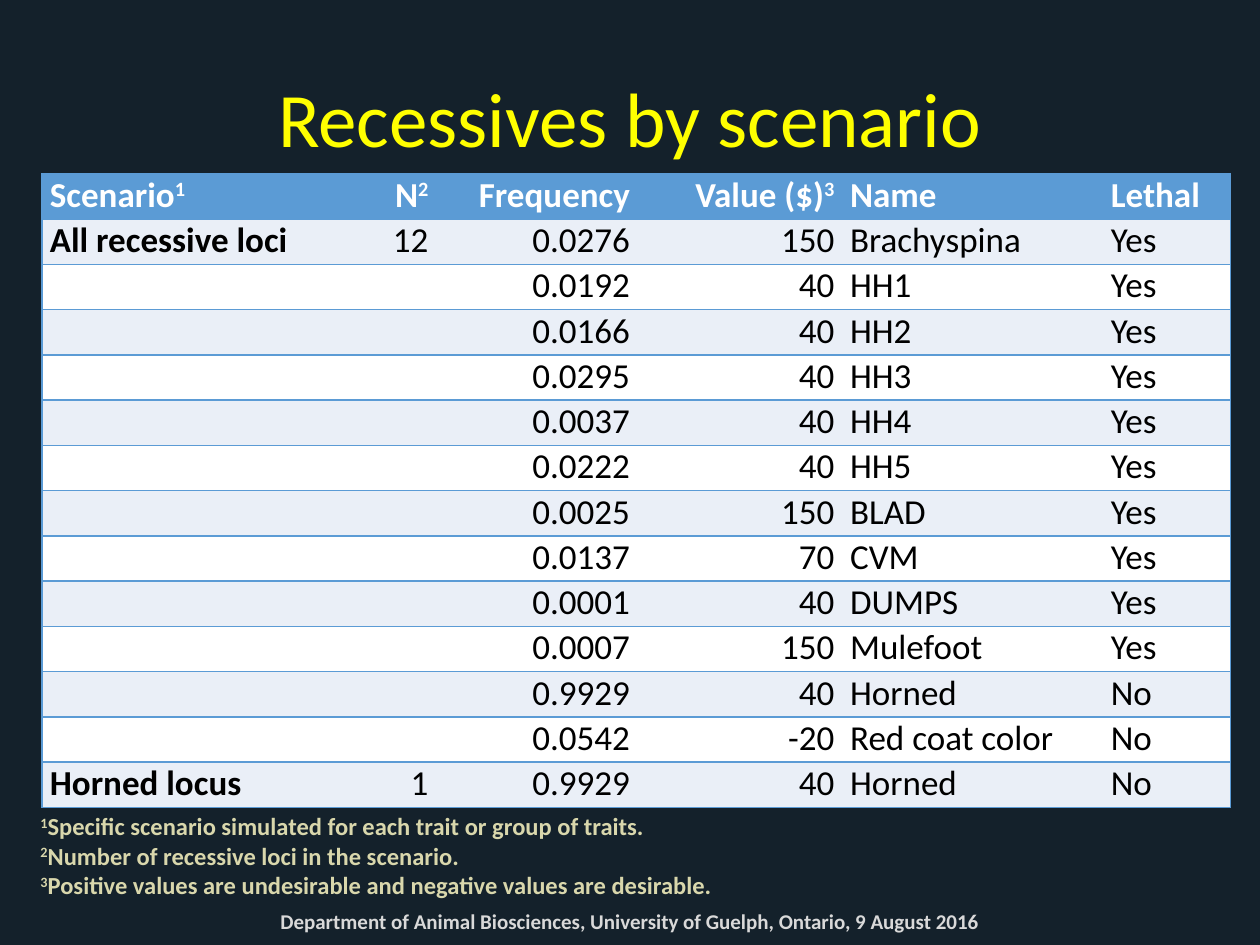
from lxml.etree import SubElement as Sub
from pptx import Presentation
from pptx.dml.color import RGBColor
from pptx.enum.text import MSO_ANCHOR as Anchor, PP_ALIGN as Align
from pptx.oxml.ns import qn
from pptx.util import Pt

# Content: "^" raises the one character after it
TITLE = "Recessives by scenario"
FOOTER = "Department of Animal Biosciences, University of Guelph, Ontario, 9 August 2016"
NOTES = [
    "^1Specific scenario simulated for each trait or group of traits.",
    "^2Number of recessive loci in the scenario.",
    "^3Positive values are undesirable and negative values are desirable.",
]
HEAD = ("Scenario^1", "N^2", "Frequency", "Value ($)^3", "Name", "Lethal")
LOCI = [
    ("All recessive loci", "12", "0.0276", "150", "Brachyspina", "Yes"),
    ("", "", "0.0192", "40", "HH1", "Yes"),
    ("", "", "0.0166", "40", "HH2", "Yes"),
    ("", "", "0.0295", "40", "HH3", "Yes"),
    ("", "", "0.0037", "40", "HH4", "Yes"),
    ("", "", "0.0222", "40", "HH5", "Yes"),
    ("", "", "0.0025", "150", "BLAD", "Yes"),
    ("", "", "0.0137", "70", "CVM", "Yes"),
    ("", "", "0.0001", "40", "DUMPS", "Yes"),
    ("", "", "0.0007", "150", "Mulefoot", "Yes"),
    ("", "", "0.9929", "40", "Horned", "No"),
    ("", "", "0.0542", "-20", "Red coat color", "No"),
    ("Horned locus", "1", "0.9929", "40", "Horned", "No"),
]
WIDTHS = (160.5, 64.8, 115.2, 116.8, 149, 73)
ALIGNS = (Align.LEFT, Align.RIGHT, Align.RIGHT, Align.RIGHT, Align.LEFT, Align.LEFT)
ROW_H = 25.87
BLUE, BAND, WHITE = "5B9BD5", "EAEFF7", "FFFFFF"
NO_STYLE = "{2D5ABB26-0587-4C30-8999-92F81FD0307C}"


def paint(hue):
    return RGBColor.from_string(hue)


def write(frame, lines, size=20, color="000000", bold=False, align=Align.LEFT):
    for i, line in enumerate(lines):
        para = frame.paragraphs[0] if i == 0 else frame.add_paragraph()
        para.alignment = align
        plain, *rest = line.split("^")
        parts = [(plain, False)]
        for part in rest:
            parts += [(part[0], True), (part[1:], False)]
        for text, raised in parts:
            if not text:
                continue
            run = para.add_run()
            run.text = text
            font = run.font
            font.name, font.size, font.bold = "Calibri", Pt(size), bold
            font.color.rgb = paint(color)
            if raised:
                run._r.get_or_add_rPr().set("baseline", "30000")


def add_box(slide, lines, place, anchor=Anchor.TOP, **style):
    frame = slide.shapes.add_textbox(*map(Pt, place)).text_frame
    frame.word_wrap = True
    frame.vertical_anchor = anchor
    write(frame, lines, **style)


def add_edges(cell, sides):
    for side in sides:
        line = Sub(cell._tc.get_or_add_tcPr(), qn("a:ln" + side), w=str(Pt(1)))
        Sub(Sub(line, qn("a:solidFill")), qn("a:srgbClr"), val=BLUE)


def add_grid(slide, left, top):
    rows = [HEAD] + LOCI
    table = slide.shapes.add_table(len(rows), len(HEAD), Pt(left), Pt(top),
                                   Pt(sum(WIDTHS)), Pt(ROW_H * len(rows))).table
    table._tbl.tblPr.find(qn("a:tableStyleId")).text = NO_STYLE
    table.horz_banding = False
    for col, width in zip(table.columns, WIDTHS):
        col.width = Pt(width)
    for r, row in enumerate(rows):
        table.rows[r].height = Pt(ROW_H)
        fill = BLUE if r == 0 else BAND if r % 2 else WHITE
        for c, text in enumerate(row):
            cell = table.cell(r, c)
            cell.margin_left = cell.margin_right = Pt(4.5)
            cell.margin_top = cell.margin_bottom = 0
            add_edges(cell, {0: "LTB", len(HEAD) - 1: "RTB"}.get(c, "TB"))
            cell.fill.solid()
            cell.fill.fore_color.rgb = paint(fill)
            write(cell.text_frame, [text], color="000000" if r else WHITE,
                  bold=r == 0 or c == 0, align=ALIGNS[c])


def main():
    deck = Presentation()
    deck.slide_width, deck.slide_height = Pt(720), Pt(540)
    slide = deck.slides.add_slide(deck.slide_layouts[6])
    back = slide.background.fill
    back.solid()
    back.fore_color.rgb = paint("14212B")

    # Title and footer
    add_box(slide, [TITLE], (36, 21.6, 648, 90), Anchor.MIDDLE,
            size=44, color="FFFF00", align=Align.CENTER)
    add_box(slide, [FOOTER], (36, 508.3, 648, 28.8), Anchor.BOTTOM,
            size=12, color="D9D9D9", bold=True, align=Align.CENTER)

    # Table and its footnotes
    add_grid(slide, 24, 99.4)
    add_box(slide, NOTES, (16, 460, 685.4, 58.3), size=14, color="D9D7AC", bold=True)
    deck.save("out.pptx")


if __name__ == "__main__":
    main()
